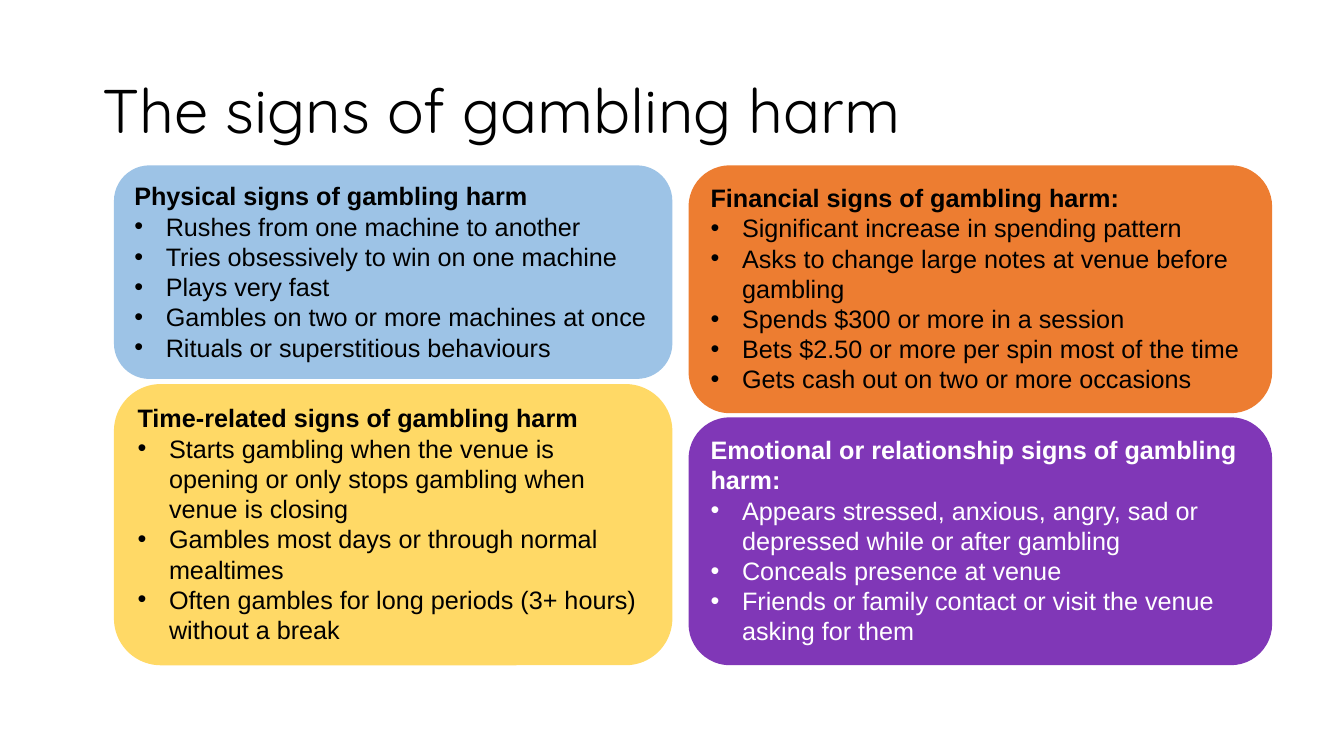
from pptx import Presentation
from pptx.dml.color import RGBColor
from pptx.enum.shapes import MSO_SHAPE
from pptx.enum.text import MSO_ANCHOR, MSO_AUTO_SIZE, PP_ALIGN
from pptx.oxml.ns import qn
from pptx.util import Pt
from lxml import etree

BLACK = RGBColor(0x00, 0x00, 0x00)
WHITE = RGBColor(0xFF, 0xFF, 0xFF)
BLUE = RGBColor(0x9D, 0xC3, 0xE6)
YELLOW = RGBColor(0xFF, 0xD9, 0x66)
ORANGE = RGBColor(0xED, 0x7D, 0x31)
PURPLE = RGBColor(0x80, 0x37, 0xB7)

# Panel columns (left, width) and shared edges, in points
LEFT_COLUMN = (81.4, 398.9)
RIGHT_COLUMN = (491.8, 416.9)
TOP, BOTTOM = 118.1, 475.2
BULLET_INDENT = Pt(22.5)

# Column, top, bottom, fill, text colour, heading, signs
PANELS = [
    (LEFT_COLUMN, TOP, 270.7, BLUE, BLACK,
     "Physical signs of gambling harm",
     ["Rushes from one machine to another",
      "Tries obsessively to win on one machine",
      "Plays very fast",
      "Gambles on two or more machines at once",
      "Rituals or superstitious behaviours"]),
    (LEFT_COLUMN, 274.3, BOTTOM, YELLOW, BLACK,
     "Time-related signs of gambling harm",
     ["Starts gambling when the venue is opening or only stops gambling "
      "when venue is closing",
      "Gambles most days or through normal mealtimes",
      "Often gambles for long periods (3+ hours) without a break"]),
    (RIGHT_COLUMN, TOP, 295.2, ORANGE, BLACK,
     "Financial signs of gambling harm:",
     ["Significant increase in spending pattern",
      "Asks to change large notes at venue before gambling",
      "Spends $300 or more in a session",
      "Bets $2.50 or more per spin most of the time",
      "Gets cash out on two or more occasions"]),
    (RIGHT_COLUMN, 298.1, BOTTOM, PURPLE, WHITE,
     "Emotional or relationship signs of gambling harm:",
     ["Appears stressed, anxious, angry, sad or depressed while or after "
      "gambling",
      "Conceals presence at venue",
      "Friends or family contact or visit the venue asking for them"]),
]


def add_bullet(paragraph):
    properties = paragraph._p.get_or_add_pPr()
    properties.set("marL", str(BULLET_INDENT))
    properties.set("indent", str(-BULLET_INDENT))
    etree.SubElement(properties, qn("a:buFont"), typeface="Arial")
    etree.SubElement(properties, qn("a:buChar"), char="•")


presentation = Presentation()
presentation.slide_width = Pt(960)
presentation.slide_height = Pt(540)
slide = presentation.slides.add_slide(presentation.slide_layouts[5])

# Title
title = slide.shapes.title
title.left, title.top, title.width, title.height = Pt(66), Pt(28.8), Pt(828), Pt(104.4)
title.text_frame.text = "The signs of gambling harm"
title.text_frame.vertical_anchor = MSO_ANCHOR.MIDDLE
title.text_frame.auto_size = MSO_AUTO_SIZE.NONE
heading_line = title.text_frame.paragraphs[0]
heading_line.alignment = PP_ALIGN.LEFT
heading_line.line_spacing = 0.9
heading_line.font.name = "Quicksand"
heading_line.font.size = Pt(44)
heading_line.font.color.rgb = BLACK

# Four panels of signs
for (left, width), top, bottom, fill, text_color, heading, signs in PANELS:
    panel = slide.shapes.add_shape(MSO_SHAPE.ROUNDED_RECTANGLE, Pt(left), Pt(top),
                                   Pt(width), Pt(bottom - top))
    panel.shadow.inherit = False
    panel.fill.solid()
    panel.fill.fore_color.rgb = fill
    panel.line.fill.background()

    frame = panel.text_frame
    frame.word_wrap = True
    frame.auto_size = MSO_AUTO_SIZE.SHAPE_TO_FIT_TEXT
    frame.vertical_anchor = MSO_ANCHOR.TOP
    frame.text = "\n".join([heading] + signs)
    for number, paragraph in enumerate(frame.paragraphs):
        paragraph.alignment = PP_ALIGN.LEFT
        if number > 0:
            add_bullet(paragraph)
        paragraph.font.name = "Arial"
        paragraph.font.size = Pt(18)
        paragraph.font.bold = number == 0
        paragraph.font.color.rgb = text_color

presentation.save("out.pptx")
